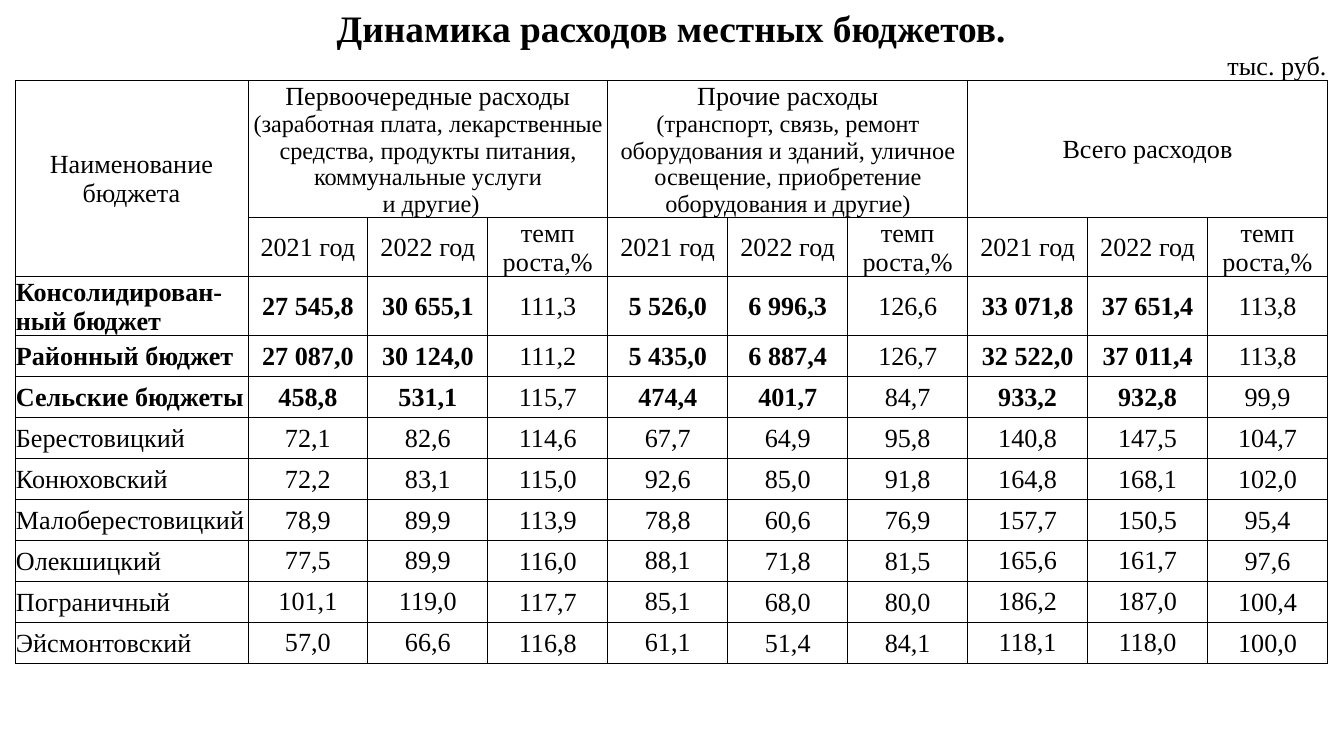
import lxml.etree
import pptx
import pptx.enum.text
import pptx.oxml.ns
import pptx.util

PX = 914400 / 134.4
COLORS = {"text": "000000", "border": "000000"}
FONT = "Times New Roman"
PLAIN_TABLE_STYLE = "{2D5ABB26-0587-4C30-8999-92F81FD0307C}"
ALIGN = pptx.enum.text.PP_ALIGN
ANCHOR = pptx.enum.text.MSO_ANCHOR

TABLE_BOX = (15, 8, 1313, 597)
COLUMN_WIDTHS = [233] + [120] * 9
ROW_HEIGHTS = [43, 30, 137, 59, 59] + [41] * 8
GROUP_STARTS = (1, 4, 7)
RATE_COLUMNS = (3, 6, 9)
FIRST_DATA_ROW = 4
BOLD_ROWS = 3

TITLE = "Динамика расходов местных бюджетов."
UNIT = "тыс. руб."
# Each group heading is a list of paragraphs made of (text, size) runs.
GROUPS = [
    [[("Первоочередные расходы ", 14),
      ("(заработная плата, лекарственные средства, продукты питания, коммунальные услуги", 13)],
     [(" и другие)", 13)]],
    [[("Прочие расходы", 14)],
     [("(транспорт, связь, ремонт оборудования и зданий, уличное освещение, "
       "приобретение оборудования и другие)", 13)]],
    [[("Всего расходов", 14)]],
]
SUBHEADINGS = [["2021 год"], ["2022 год"], ["темп", "роста,%"]]
BUDGETS = [
    "Консолидирован-ный бюджет|27 545,8|30 655,1|111,3|5 526,0|6 996,3|126,6|33 071,8|37 651,4|113,8",
    "Районный бюджет|27 087,0|30 124,0|111,2|5 435,0|6 887,4|126,7|32 522,0|37 011,4|113,8",
    "Сельские бюджеты|458,8|531,1|115,7|474,4|401,7|84,7|933,2|932,8|99,9",
    "Берестовицкий|72,1|82,6|114,6|67,7|64,9|95,8|140,8|147,5|104,7",
    "Конюховский|72,2|83,1|115,0|92,6|85,0|91,8|164,8|168,1|102,0",
    "Малоберестовицкий|78,9|89,9|113,9|78,8|60,6|76,9|157,7|150,5|95,4",
    "Олекшицкий|77,5|89,9|116,0|88,1|71,8|81,5|165,6|161,7|97,6",
    "Пограничный|101,1|119,0|117,7|85,1|68,0|80,0|186,2|187,0|100,4",
    "Эйсмонтовский|57,0|66,6|116,8|61,1|51,4|84,1|118,1|118,0|100,0",
]


def px(length):
    return pptx.util.Emu(round(length * PX))


def apply_format(target, values):
    for name, value in values.items():
        setattr(target, name, value)


def add_element(parent, tag, **attributes):
    return lxml.etree.SubElement(parent, pptx.oxml.ns.qn(tag), attributes)


def add_borders(cell, sides):
    """Draw half-point lines on the given sides, named L, R, T and B."""
    properties = cell._tc.get_or_add_tcPr()
    for side in sides:
        line = add_element(properties, "a:ln" + side, w=str(pptx.util.Pt(0.5)))
        fill = add_element(line, "a:solidFill")
        add_element(fill, "a:srgbClr", val=COLORS["border"])


def write_cell(cell, paragraphs, align=ALIGN.CENTER, bold=False):
    for index, runs in enumerate(paragraphs):
        frame = cell.text_frame
        paragraph = frame.add_paragraph() if index else frame.paragraphs[0]
        paragraph.alignment = align
        for text, size in runs:
            run = paragraph.add_run()
            run.text = text
            apply_format(run.font, {"name": FONT, "size": pptx.util.Pt(size), "bold": bold})
            run.font.color.rgb = pptx.dml.color.RGBColor.from_string(COLORS["text"])


def format_cells(table):
    for row_index, row in enumerate(table.rows):
        for column_index, cell in enumerate(row.cells):
            lifted = column_index in (7, 8) or (column_index in (1, 2, 4) and row_index > 5)
            apply_format(cell, {
                "margin_left": px(1), "margin_right": px(1), "margin_top": px(1),
                "margin_bottom": px(1 if lifted else 0),
                "vertical_anchor": ANCHOR.BOTTOM if row_index < 2 else ANCHOR.MIDDLE,
            })
            if row_index:
                add_borders(cell, "B" if row_index == 1 else "LRTB")
            cell.fill.background()
            if not cell.text_frame.text:
                # An empty cell takes its line height from the paragraph end mark.
                add_element(cell.text_frame.paragraphs[0]._p, "a:endParaRPr", sz="1000")


def fill_headings(table):
    table.cell(0, 0).merge(table.cell(0, 9))
    write_cell(table.cell(0, 0), [[(TITLE, 20)]], bold=True)
    for column in (1, 3, 5):
        table.cell(1, column).merge(table.cell(1, column + 1))
    write_cell(table.cell(1, 9), [[(UNIT, 14)]], ALIGN.RIGHT)
    table.cell(2, 0).merge(table.cell(3, 0))
    write_cell(table.cell(2, 0), [[("Наименование бюджета", 14)]])
    for start, group in zip(GROUP_STARTS, GROUPS):
        table.cell(2, start).merge(table.cell(2, start + 2))
        write_cell(table.cell(2, start), group)
        for offset, lines in enumerate(SUBHEADINGS):
            write_cell(table.cell(3, start + offset), [[(line, 14)] for line in lines])


def fill_budgets(table):
    for index, budget in enumerate(BUDGETS):
        for column, text in enumerate(budget.split("|")):
            write_cell(table.cell(FIRST_DATA_ROW + index, column), [[(text, 14)]],
                       ALIGN.CENTER if column else ALIGN.LEFT,
                       index < BOLD_ROWS and column not in RATE_COLUMNS)


def add_budget_table(slide, box):
    shape = slide.shapes.add_table(len(ROW_HEIGHTS), len(COLUMN_WIDTHS), *map(px, box))
    table = shape.table
    apply_format(table, {"first_row": False, "horz_banding": False})
    table._tbl.tblPr.find(pptx.oxml.ns.qn("a:tableStyleId")).text = PLAIN_TABLE_STYLE
    for column, width in zip(table.columns, COLUMN_WIDTHS):
        column.width = px(width)
    for row, height in zip(table.rows, ROW_HEIGHTS):
        row.height = px(height)
    fill_headings(table)
    fill_budgets(table)
    format_cells(table)


def main():
    presentation = pptx.Presentation()
    apply_format(presentation, {"slide_width": px(1344), "slide_height": px(756)})
    slide = presentation.slides.add_slide(presentation.slide_layouts[6])
    add_budget_table(slide, TABLE_BOX)
    presentation.save("out.pptx")


if __name__ == "__main__":
    main()
